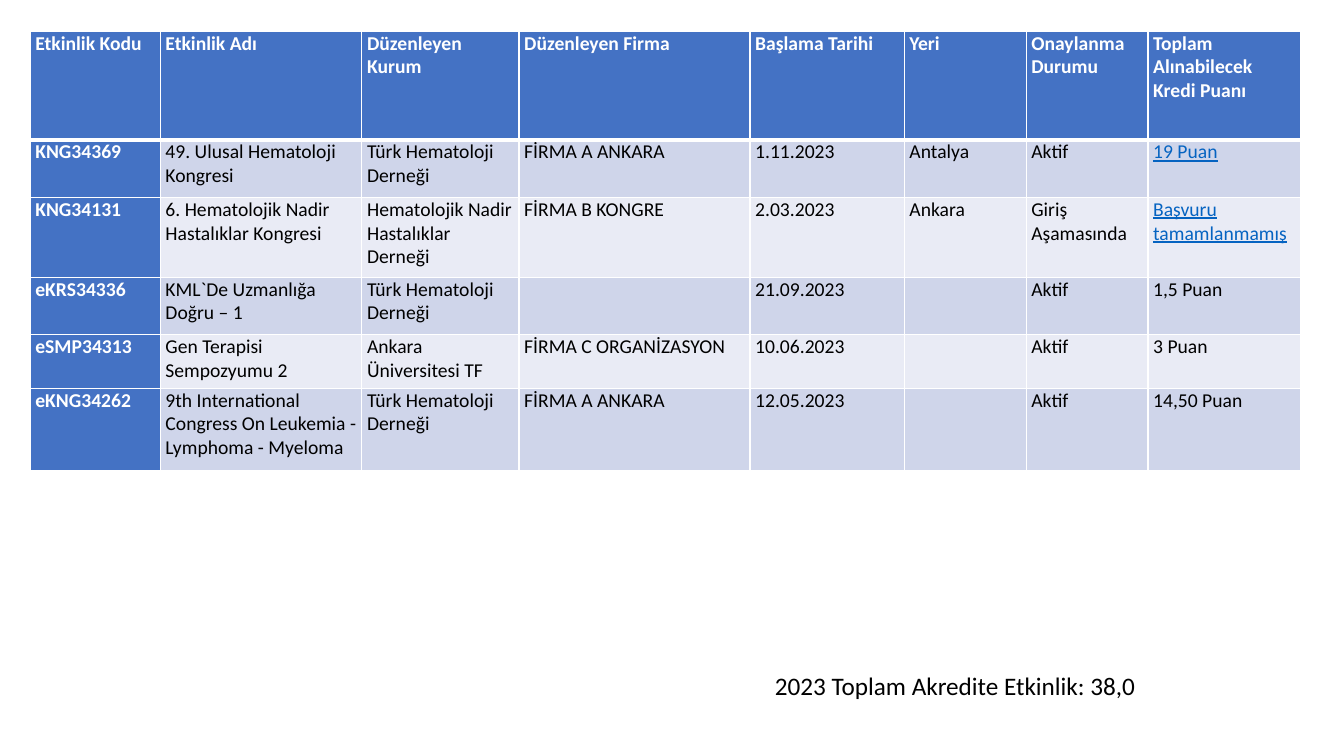
from lxml import etree
from pptx import Presentation
from pptx.dml.color import RGBColor
from pptx.enum.text import MSO_AUTO_SIZE
from pptx.oxml.ns import qn
from pptx.util import Cm, Pt

FIT_SHAPE = MSO_AUTO_SIZE.SHAPE_TO_FIT_TEXT
COLORS = {
    "white": "FFFFFF",
    "black": "000000",
    "header": "4472C4",
    "odd": "CFD5EA",
    "even": "E9EBF5",
    "link": "0563C1",
}
COLUMN_WIDTHS = [3.28, 5.08, 3.96, 5.82, 3.89, 3.07, 3.07, 3.84]
ROW_HEIGHTS = [2.74, 1.45, 2.01, 1.45, 1.35, 2.06]
EVENTS = [
    ["Etkinlik Kodu", "Etkinlik Adı", "Düzenleyen Kurum", "Düzenleyen Firma",
     "Başlama Tarihi", "Yeri", "Onaylanma Durumu",
     "Toplam Alınabilecek Kredi Puanı"],
    ["KNG34369", "49. Ulusal Hematoloji Kongresi", "Türk Hematoloji Derneği",
     "FİRMA A ANKARA", "1.11.2023", "Antalya", "Aktif", "19 Puan"],
    ["KNG34131", "6. Hematolojik Nadir Hastalıklar Kongresi",
     "Hematolojik Nadir Hastalıklar Derneği", "FİRMA B KONGRE", "2.03.2023",
     "Ankara", "Giriş Aşamasında", "Başvuru tamamlanmamış"],
    ["eKRS34336", "KML`De Uzmanlığa Doğru – 1", "Türk Hematoloji Derneği", "",
     "21.09.2023", "", "Aktif", "1,5 Puan"],
    ["eSMP34313", "Gen Terapisi Sempozyumu 2", "Ankara Üniversitesi TF",
     "FİRMA C ORGANİZASYON", "10.06.2023", "", "Aktif", "3 Puan"],
    ["eKNG34262", "9th International Congress On Leukemia - Lymphoma - Myeloma",
     "Türk Hematoloji Derneği", "FİRMA A ANKARA", "12.05.2023", "", "Aktif",
     "14,50 Puan"],
]
LINKED_CELLS = {(1, 7), (2, 7)}


class SlideBuilder:
    def __init__(self, slide, font="Calibri"):
        self.slide = slide
        self.font = font

    def text(self, tf, text, size, color="black", **formats):
        r = tf.paragraphs[0].add_run()
        r.text = text
        values = {"name": self.font, "size": Pt(size), **formats}
        for name, value in values.items():
            setattr(r.font, name, value)
        r.font.color.rgb = RGBColor.from_string(COLORS[color])

    def textbox(self, left, top, width, height, text, size):
        s = self.slide.shapes.add_textbox(Cm(left), Cm(top), Cm(width), Cm(height))
        tf = s.text_frame
        tf.word_wrap = True
        tf.auto_size = FIT_SHAPE
        self.text(tf, text, size)

    def borders(self, cell, widths):
        tc_pr = cell._tc.get_or_add_tcPr()
        for side, width in widths.items():
            ln = etree.SubElement(tc_pr, qn(f"a:ln{side}"), w=str(Pt(width)))
            fill = etree.SubElement(ln, qn("a:solidFill"))
            etree.SubElement(fill, qn("a:srgbClr"), val=COLORS["white"])

    def cell(self, cell, row, col, text):
        margins = {"margin_left": 0.13, "margin_right": 0.13,
                   "margin_top": 0, "margin_bottom": 0}
        for name, value in margins.items():
            setattr(cell, name, Cm(value))
        self.borders(cell, {"L": 1, "R": 1, "T": 3 if row == 1 else 1,
                            "B": 3 if row == 0 else 1})
        heading = row == 0 or col == 0
        linked = (row, col) in LINKED_CELLS
        band = "header" if heading else "odd" if row % 2 else "even"
        color = "white" if heading else "link" if linked else "black"
        cell.fill.solid()
        cell.fill.fore_color.rgb = RGBColor.from_string(COLORS[band])
        if text:
            self.text(cell.text_frame, text, 14, color, bold=heading, underline=linked)

    def table(self, left, top, widths, heights, rows):
        s = self.slide.shapes.add_table(
            len(heights), len(widths), Cm(left), Cm(top),
            Cm(sum(widths)), Cm(sum(heights)))
        table = s.table
        for column, width in zip(table.columns, widths):
            column.width = Cm(width)
        for row, height in zip(table.rows, heights):
            row.height = Cm(height)
        for i, row in enumerate(rows):
            for j, text in enumerate(row):
                self.cell(table.cell(i, j), i, j, text)


def main():
    prs = Presentation()
    prs.slide_width, prs.slide_height = Cm(33.87), Cm(19.05)
    builder = SlideBuilder(prs.slides.add_slide(prs.slide_layouts[6]))
    builder.table(0.76, 0.79, COLUMN_WIDTHS, ROW_HEIGHTS, EVENTS)
    builder.textbox(19.28, 16.76, 9.7, 1.02, "2023 Toplam Akredite Etkinlik: 38,0", 18)
    prs.save("out.pptx")


if __name__ == "__main__":
    main()
